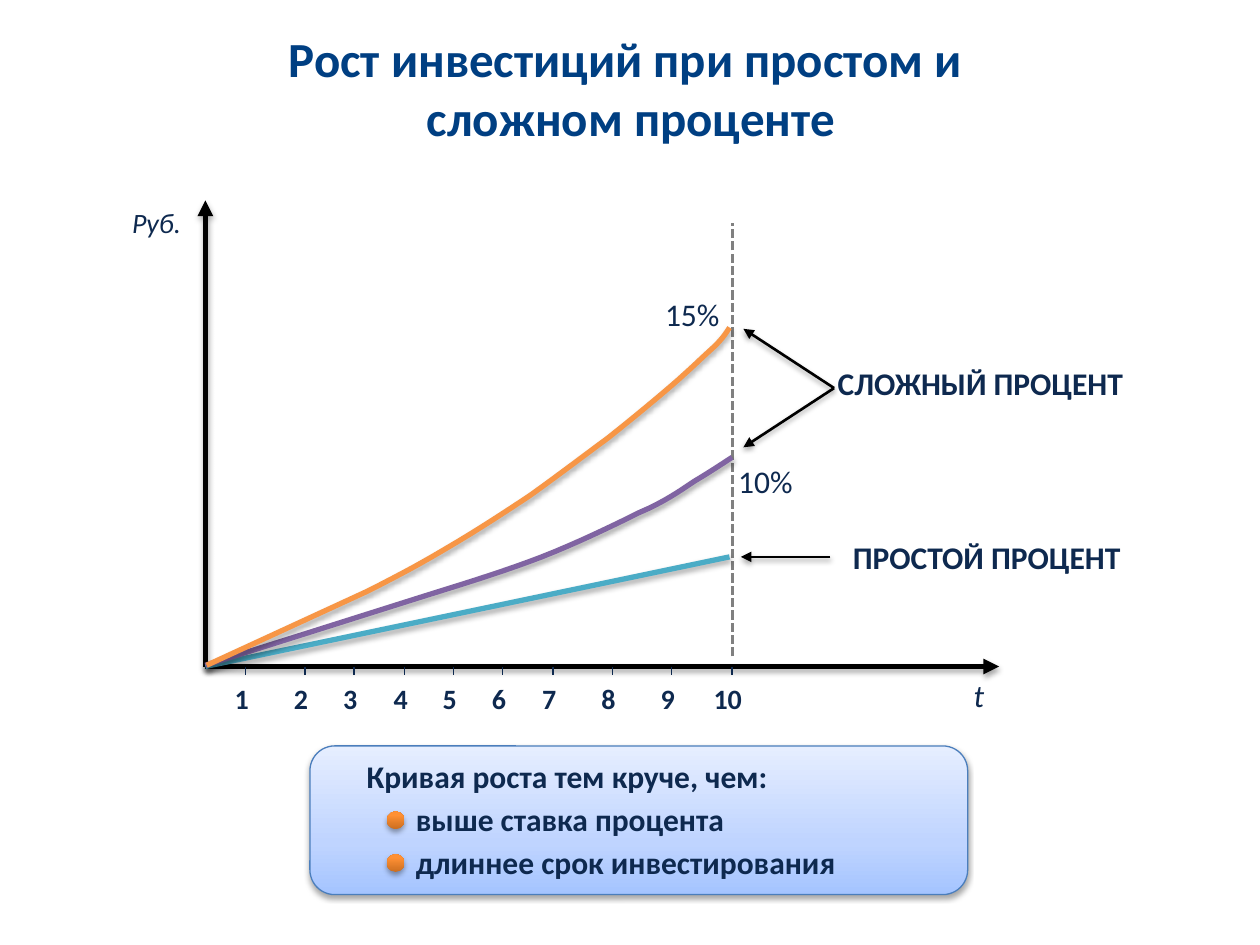
"""Build a slide on the growth of investments under simple and compound interest."""
import copy

import pptx
import pptx.dml.color
import pptx.enum.dml
import pptx.enum.shapes
import pptx.enum.text
import pptx.oxml
import pptx.oxml.ns
import pptx.util

hue = pptx.dml.color.RGBColor.from_string
kinds = pptx.enum.shapes.MSO_SHAPE
align = pptx.enum.text.PP_ALIGN
anchor = pptx.enum.text.MSO_ANCHOR
names = pptx.oxml.ns.nsdecls("a")
tag = pptx.oxml.ns.qn
navy = "0E294F"
shade = (
    f'<a:effectLst {names}><a:outerShdw blurRad="39370" dist="22860" dir="5400000" rotWithShape="0">'
    '<a:srgbClr val="000000"><a:alpha val="35000"/></a:srgbClr></a:outerShdw></a:effectLst>'
)

deck = pptx.Presentation()
deck.slide_width = pptx.util.Inches(10)
deck.slide_height = pptx.util.Inches(7.5)
unit = deck.slide_width // 100
slide = deck.slides.add_slide(deck.slide_layouts[1])
shapes = slide.shapes


def write(text, area, box=None, size=18, tint=navy, bold=False, italic=False,
          side=align.LEFT, hold=anchor.TOP, wrap=False, after=0):
    """Put formatted text in a box given in grid columns and rows."""
    spots = [round(part * unit) for part in area]
    box = box or shapes.add_textbox(*spots)
    box.left, box.top, box.width, box.height = spots
    frame = box.text_frame
    frame.text = text
    frame.word_wrap = wrap
    frame.auto_size = pptx.enum.text.MSO_AUTO_SIZE.NONE
    frame.vertical_anchor = hold
    for para in frame.paragraphs:
        para.alignment = side
        para.space_before = pptx.util.Pt(0)
        para.space_after = pptx.util.Pt(after)
        for run in para.runs:
            font = run.font
            font.name, font.size = "Calibri", pptx.util.Pt(size)
            font.bold, font.italic = bold, italic
            font.color.rgb = hue(tint)
    return frame


def link(ends, tint="000000", width=3, tail=True, dash=None, glow=True):
    """Draw a line between two grid points."""
    line = shapes.add_connector(pptx.enum.shapes.MSO_CONNECTOR.STRAIGHT,
                                *[round(part * unit) for part in ends])
    line.line.color.rgb = hue(tint)
    line.line.width = pptx.util.Pt(width)
    if dash:
        line.line.dash_style = dash
    props = line._element.spPr
    if tail:
        props.find(tag("a:ln")).append(pptx.oxml.parse_xml(f'<a:tailEnd {names} type="triangle"/>'))
    props.append(pptx.oxml.parse_xml(shade if glow else f"<a:effectLst {names}/>"))


write("Рост инвестиций при простом и \vсложном проценте", (10.6, 4.7, 78.9, 4.5), box=shapes.title,
      size=28, tint="003F82", bold=True, side=align.CENTER, hold=anchor.MIDDLE, wrap=True)
notes = write("Кривая роста тем круче, чем:\nвыше ставка процента\nдлиннее срок инвестирования",
              (28.1, 59.6, 44.5, 10.9), box=slide.placeholders[1], bold=True, after=3)
for para, inset in zip(notes.paragraphs, (0, 3.9, 3.9)):
    props = para._p.get_or_add_pPr()
    props.set("marL", str(round(inset * unit)))
    props.set("indent", "0")
    props.append(pptx.oxml.parse_xml(f"<a:buNone {names}/>"))

left, base, term = 16.3, 52.9, 58.1
link((left, base, left, 15.9))
link((left, base, 79.3, base))
ticks = (19.5, 24.2, 28.1, 32.1, 36, 39.9, 43.9, 48.6, 53.3, term)
for year, spot in enumerate(ticks, 1):
    link((spot, base, spot, base + 0.7), tint=navy, width=0.75, tail=False, glow=False)
    wide = 3.3 if year < 10 else 4.5
    write(str(year), (spot - 0.2 - wide / 2, 53.6, wide, 3.7), size=16, bold=True)
write("Руб.", (9.5, 15.8, 6.6, 3.7), size=16, italic=True)
write("t", (76.3, 53.2, 2.7, 4), italic=True)
link((term, 52.1, term, 17.7), tint="808080", width=1.75, tail=False, glow=False,
     dash=pptx.enum.dml.MSO_LINE.SQUARE_DOT)

write("СЛОЖНЫЙ ПРОЦЕНТ", (65.5, 28.4, 28.9, 4), bold=True)
write("ПРОСТОЙ ПРОЦЕНТ", (66.7, 42.2, 27.5, 4), bold=True)
for ends in ((65.9, 44.2, 58.8, 44.2), (66.2, 30.8, 59, 26.1), (66.2, 30.8, 59, 35.5)):
    link(ends, width=1.5)
write("10%", (57.6, 36.2, 7.1, 4))
write("15%", (51.8, 22.9, 8.7, 4), wrap=True)

link((left, base, 57.9, 44.2), tint="4BACC6", tail=False)
curves = (
    ("8064A2", (16.3, 52.8), [
        (33.7, 47.3), (38.2, 45.9), (40.1, 45.3), (43, 44.2), (45.8, 43.1), (48.7, 41.7), (50.7, 40.7),
        (52.8, 39.8), (53.9, 39), (55.1, 38.2), (56.3, 37.5), (58.1, 36.3), (58.1, 36.3)]),
    ("F79646", (16.4, 52.8), [
        (29, 47), (32.2, 45.4), (33.6, 44.6), (35.8, 43.3), (38, 42), (40, 40.7), (42.1, 39.3),
        (44.2, 37.8), (46.3, 36.2), (48.2, 34.8), (50.1, 33.3), (51.9, 31.8), (53.3, 30.6),
        (54.7, 29.4), (55.9, 28.2), (56.7, 27.5), (57.5, 26.7), (57.7, 26.3), (57.9, 26)]),
)
for tint, start, knots in curves:
    track = [knots[0]]
    for first in range(0, len(knots) - 1, 3):
        arc = knots[first:first + 4]
        for step in range(1, 9):
            t = step / 8
            parts = ((1 - t) ** 3, 3 * t * (1 - t) ** 2, 3 * t * t * (1 - t), t ** 3)
            track.append([sum(p * k[axis] for p, k in zip(parts, arc)) for axis in (0, 1)])
    pen = shapes.build_freeform(round(start[0] * unit), round(start[1] * unit))
    pen.add_line_segments([(round(x * unit), round(y * unit)) for x, y in track], close=False)
    curve = pen.convert_to_shape()
    curve.fill.background()
    curve.line.color.rgb = hue(tint)
    curve.line.width = pptx.util.Pt(3)
    curve._element.spPr.append(pptx.oxml.parse_xml(shade))

blues = ((0, "A4C4FF"), (0.35, "BFD4FF"), (1, "E6EEFF"))
golds = ((0, "CC6E20"), (0.8, "FF9034"), (1, "FF9136"))
for kind, area, stops, edge in (
    (kinds.ROUNDED_RECTANGLE, (24.6, 59.2, 52.2, 11.8), blues, "4B7EBC"),
    (kinds.OVAL, (30.7, 64.4, 1.4, 1.4), golds, None),
    (kinds.OVAL, (30.7, 67.8, 1.4, 1.4), golds, None),
):
    item = shapes.add_shape(kind, *[round(part * unit) for part in area])
    item.fill.gradient()
    item.fill.gradient_angle = 90
    props = item._element.spPr
    ramp = props.find(".//" + tag("a:gsLst"))
    ramp.append(copy.deepcopy(ramp[-1]))
    for stop, (share, tint) in zip(item.fill.gradient_stops, stops):
        stop.position = share
        stop.color.rgb = hue(tint)
    if edge:
        item.line.color.rgb = hue(edge)
        item.line.width = pptx.util.Pt(0.75)
        shapes._spTree.insert(2, item._element)
    else:
        item.line.fill.background()
    props.append(pptx.oxml.parse_xml(shade))

deck.save("out.pptx")
